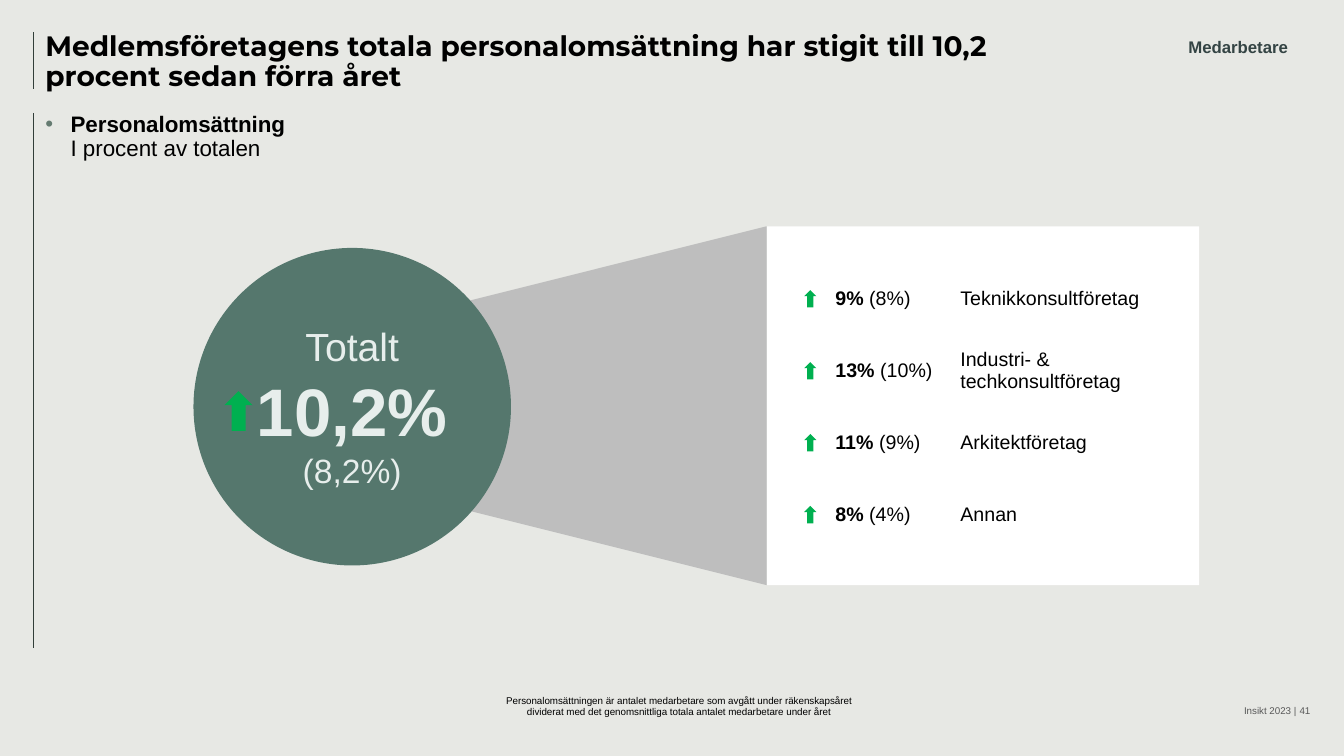
from dataclasses import dataclass

from lxml.etree import SubElement
from pptx import Presentation
from pptx.dml.color import RGBColor
from pptx.enum.shapes import MSO_CONNECTOR, MSO_SHAPE
from pptx.enum.text import MSO_ANCHOR, PP_ALIGN
from pptx.oxml.ns import qn
from pptx.util import Pt


@dataclass(frozen=True)
class Theme:
    background: str = "E7E8E4"
    rule: str = "323E39"
    black: str = "000000"
    white: str = "FFFFFF"
    bullet: str = "657B71"
    footer: str = "595959"
    section: str = "344444"
    funnel: str = "BABABA"
    circle: str = "55776D"
    circle_text: str = "E7EEEC"
    increase: str = "00B050"
    heading_font: str = "Montserrat"
    body_font: str = "Arial"
    title_size: int = 20
    body_size: int = 16
    table_size: int = 14
    section_size: int = 12
    small_size: int = 7
    total_label_size: int = 28
    total_size: int = 48
    previous_size: int = 24


class SlideBuilder:
    def __init__(self, slide, theme):
        self.slide = slide
        self.theme = theme
        fill = slide.background.fill
        fill.solid()
        fill.fore_color.rgb = RGBColor.from_string(theme.background)

    def rule(self, x, top, bottom):
        line = self.slide.shapes.add_connector(
            MSO_CONNECTOR.STRAIGHT, Pt(x), Pt(top), Pt(x), Pt(bottom))
        line.line.color.rgb = RGBColor.from_string(self.theme.rule)
        line.line.width = Pt(0.5)
        SubElement(line._element.spPr, qn("a:effectLst"))

    def style(self, paragraph, size, color=None, bold=False, font=None, align=None):
        paragraph.alignment = align
        paragraph.font.size = Pt(size)
        paragraph.font.bold = bold
        paragraph.font.name = font or self.theme.body_font
        paragraph.font.color.rgb = RGBColor.from_string(color or self.theme.black)

    def run(self, paragraph, text, size=None, bold=None):
        run = paragraph.add_run()
        run.text = text
        if size:
            run.font.size = Pt(size)
        if bold is not None:
            run.font.bold = bold

    def text_box(self, left, top, width, height, margins=(0, 0), anchor=MSO_ANCHOR.TOP):
        box = self.slide.shapes.add_textbox(Pt(left), Pt(top), Pt(width), Pt(height))
        frame = box.text_frame
        frame.word_wrap = True
        frame.vertical_anchor = anchor
        frame.margin_left = frame.margin_right = Pt(margins[0])
        frame.margin_top = frame.margin_bottom = Pt(margins[1])
        return frame.paragraphs[0]

    def text(self, box, text, size, margins=(0, 0), anchor=MSO_ANCHOR.TOP,
             spacing=None, **style):
        paragraph = self.text_box(*box, margins, anchor)
        paragraph.line_spacing = spacing
        self.run(paragraph, text)
        self.style(paragraph, size, **style)

    def bullet(self, box, heading, detail):
        paragraph = self.text_box(*box)
        properties = paragraph._p.get_or_add_pPr()
        properties.set("marL", str(Pt(18)))
        properties.set("indent", str(-Pt(18)))
        color = SubElement(properties, qn("a:buClr"))
        SubElement(color, qn("a:srgbClr"), val=self.theme.bullet)
        SubElement(properties, qn("a:buFont"), typeface=self.theme.body_font)
        SubElement(properties, qn("a:buChar"), char="•")
        paragraph.line_spacing = 0.9
        self.style(paragraph, self.theme.body_size)
        self.run(paragraph, heading, bold=True)
        paragraph.add_line_break()
        self.run(paragraph, detail)

    def shape(self, kind, left, top, width, height, color, rotation=0, opacity=None):
        shape = self.slide.shapes.add_shape(kind, Pt(left), Pt(top), Pt(width), Pt(height))
        shape.rotation = rotation
        shape.shadow.inherit = False
        shape.line.fill.background()
        shape.fill.solid()
        shape.fill.fore_color.rgb = RGBColor.from_string(color)
        if opacity:
            fill_color = shape._element.spPr.find(qn("a:solidFill"))[0]
            SubElement(fill_color, qn("a:alpha"), val=str(opacity * 1000))
        return shape

    def total_circle(self, left, top, diameter, label, total, previous):
        theme = self.theme
        circle = self.shape(MSO_SHAPE.OVAL, left, top, diameter, diameter, theme.circle)
        frame = circle.text_frame
        frame.word_wrap = True
        frame.vertical_anchor = MSO_ANCHOR.MIDDLE
        current = frame.paragraphs[0]
        self.run(current, label)
        self.run(current, total, theme.total_size, True)
        self.style(current, theme.total_label_size, theme.circle_text, align=PP_ALIGN.CENTER)
        earlier = frame.add_paragraph()
        self.run(earlier, previous)
        self.style(earlier, theme.previous_size, theme.circle_text, align=PP_ALIGN.CENTER)

    def table(self, left, top, widths, row_height, rows):
        frame = self.slide.shapes.add_table(
            len(rows), len(widths), Pt(left), Pt(top),
            Pt(sum(widths)), Pt(row_height * len(rows)))
        table = frame.table
        table.first_row = table.horz_banding = False
        for column, width in zip(table.columns, widths):
            column.width = Pt(width)
        for index, (current, previous, sector) in enumerate(rows):
            cells = table.rows[index].cells
            for cell in cells:
                cell.fill.background()
                cell.vertical_anchor = MSO_ANCHOR.MIDDLE
                self.style(cell.text_frame.paragraphs[0], self.theme.table_size)
            share = cells[0].text_frame.paragraphs[0]
            self.run(share, f"{current} ", bold=True)
            self.run(share, f"({previous})")
            self.run(cells[1].text_frame.paragraphs[0], sector)


def main():
    theme = Theme()
    presentation = Presentation()
    presentation.slide_width = Pt(960)
    presentation.slide_height = Pt(540)
    slide = presentation.slides.add_slide(presentation.slide_layouts[6])
    builder = SlideBuilder(slide, theme)

    builder.rule(24, 23, 63.5)
    builder.rule(24, 80.6, 463)
    builder.text((32.4, 23, 687.6, 40.3),
                 "Medlemsföretagens totala personalomsättning har stigit till 10,2 "
                 "procent sedan förra året",
                 theme.title_size, spacing=0.9, bold=True, font=theme.heading_font)
    builder.bullet((32.4, 80.6, 903.6, 383), "Personalomsättning", "I procent av totalen")
    for right, label in ((926, "Insikt 2023 |"), (936, "41")):
        builder.text((right - 159, 499, 159, 13), label, theme.small_size,
                     anchor=MSO_ANCHOR.BOTTOM, color=theme.footer, align=PP_ALIGN.RIGHT)
    builder.text((833, 23, 103, 21.6), "Medarbetare", theme.section_size, (7.2, 3.6),
                 color=theme.section, bold=True, align=PP_ALIGN.CENTER)

    builder.shape(MSO_SHAPE.TRAPEZOID, 306, 176.4, 256.3, 226.8, theme.funnel, 270, 90)
    builder.shape(MSO_SHAPE.RECTANGLE, 547.9, 161.7, 308.7, 256.3, theme.white)
    builder.total_circle(138.2, 177.1, 226.8, "Totalt ", "10,2%", "(8,2%)")

    rows = (
        ("9%", "8%", "Teknikkonsultföretag"),
        ("13%", "10%", "Industri- & techkonsultföretag"),
        ("11%", "9%", "Arkitektföretag"),
        ("8%", "4%", "Annan"),
    )
    table_top, row_height = 187.7, 51.4
    builder.table(589.5, table_top, (89.3, 157.7), row_height, rows)
    builder.text((346.3, 492.5, 277.2, 24.5),
                 "Personalomsättningen är antalet medarbetare\u00a0som avgått under "
                 "räkenskapsåret dividerat med det genomsnittliga totala antalet "
                 "medarbetare under året",
                 theme.small_size, (7.2, 3.6), align=PP_ALIGN.CENTER)

    builder.shape(MSO_SHAPE.UP_ARROW, 160.4, 279.4, 20, 28.4, theme.increase)
    for index in range(len(rows)):
        middle = table_top + row_height * (index + 0.5)
        builder.shape(MSO_SHAPE.UP_ARROW, 574.4, middle - 6.2, 8.8, 12.4, theme.increase)

    presentation.save("out.pptx")


if __name__ == "__main__":
    main()
